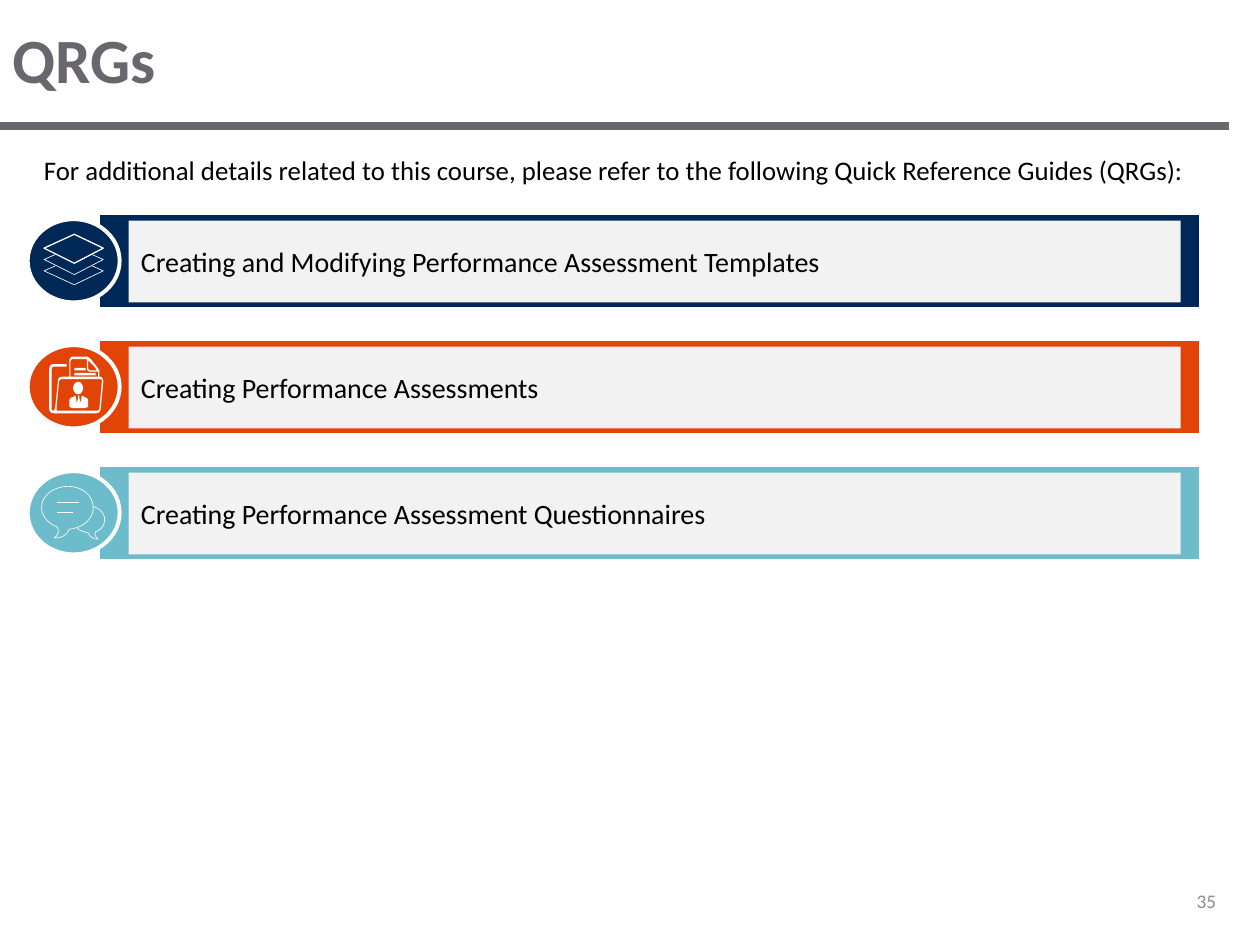
from pptx import Presentation
from pptx import util as u
from pptx.dml.color import RGBColor
from pptx.enum import shapes, text
from pptx.oxml import parse_xml
from pptx.oxml.ns import nsdecls

COLORS = {"grey": "69676D", "black": "000000", "white": "FFFFFF", "panel": "F2F2F2",
          "number": "8C8C8C", "navy": "002857", "orange": "E24307", "teal": "6CBCCB"}
FONT = "Calibri"
WIDTH, HEIGHT = 10, 7.5
UNIT = 0.01          # icon grid step, inches
THIN = 0.37          # fine icon stroke, points


def rgb(name):
    return RGBColor.from_string(COLORS[name])


def style(shape, fill=None, line=None, weight=1):
    shape.shadow.inherit = False
    if fill:
        shape.fill.solid()
        shape.fill.fore_color.rgb = rgb(fill)
    else:
        shape.fill.background()
    if line:
        shape.line.color.rgb = rgb(line)
        shape.line.width = u.Pt(weight)
    else:
        shape.line.fill.background()


def add_box(slide, kind, box, fill, line=None, weight=1):
    shape = slide.shapes.add_shape(kind, *map(u.Inches, box))
    style(shape, fill, line, weight)
    return shape


def add_line(slide, start, end, color, weight):
    line = slide.shapes.add_connector(shapes.MSO_CONNECTOR.STRAIGHT,
                                      *map(u.Inches, (*start, *end)))
    line.line.color.rgb = rgb(color)
    line.line.width = u.Pt(weight)
    line._element.spPr.append(parse_xml(f"<a:effectLst {nsdecls('a')}/>"))


def write(shape, words, size, color, bold=False, align=text.PP_ALIGN.LEFT,
          anchor=text.MSO_ANCHOR.MIDDLE, space=0):
    frame = shape.text_frame
    frame.word_wrap = True
    frame.vertical_anchor = anchor
    paragraph = frame.paragraphs[0]
    paragraph.alignment = align
    paragraph.space_before = paragraph.space_after = u.Pt(space)
    run = paragraph.add_run()
    run.text = words
    run.font.name, run.font.size, run.font.bold = FONT, u.Pt(size), bold
    run.font.color.rgb = rgb(color)


def flatten(steps, samples=10):
    """Turn points (x, y) and cubic curves (x1, y1, x2, y2, x, y) into points."""
    points = [steps[0]]
    for step in steps[1:]:
        if len(step) == 2:
            points.append(step)
            continue
        controls = [points[-1], step[:2], step[2:4], step[4:]]
        for i in range(1, samples + 1):
            t = i / samples
            weights = ((1 - t) ** 3, 3 * t * (1 - t) ** 2, 3 * t * t * (1 - t), t ** 3)
            points.append(tuple(sum(w * c[axis] for w, c in zip(weights, controls))
                                for axis in (0, 1)))
    return points


def add_outline(slide, origin, contours, closed=True, **look):
    left, top = origin
    builder = None
    for contour in contours:
        points = [(u.Inches(left + x * UNIT), u.Inches(top + y * UNIT))
                  for x, y in flatten(contour)]
        if builder is None:
            builder = slide.shapes.build_freeform(*points[0])
        else:
            builder.move_to(*points[0])
        builder.add_line_segments(points[1:], close=closed)
    style(builder.convert_to_shape(), **look)


# Icons, drawn on the unit grid from the badge's top left corner
def layers_icon(slide, left, top):
    sheets = [
        (0.75, True, [(37, 12), (13, 23), (37, 35), (60, 23)]),
        (THIN, False, [(51, 37), (60, 41), (37, 52), (13, 41), (22, 37)]),
        (THIN, False, [(51, 28), (60, 32), (37, 44), (13, 32), (22, 28)]),
    ]
    for weight, closed, sheet in sheets:
        add_outline(slide, (left, top), [sheet], closed, line="white", weight=weight)


def folder_icon(slide, left, top):
    folder = [(57, 25), (57, 21), (57, 19, 53, 15, 51, 12), (50, 11, 48, 9, 47, 9),
              (36, 9), (34, 9, 33, 11, 33, 13), (33, 25), (28, 25),
              (25, 25, 24, 26, 24, 29), (22, 48), (22, 50, 21, 52, 20, 52),
              (19, 52, 19, 50, 19, 49), (19, 20), (19, 19, 19, 17, 21, 17),
              (31, 17), (31, 15), (21, 15), (18, 15, 17, 17, 17, 20), (17, 50),
              (17, 53, 19, 54, 21, 54), (54, 54), (57, 54, 58, 52, 58, 50),
              (60, 29), (60, 27, 59, 25, 57, 25)]
    corner = [(48, 12), (53, 17), (55, 20), (50, 20), (49, 20, 48, 19, 48, 18)]
    page = [(34, 13), (34, 12, 35, 11, 36, 11), (47, 11), (47, 18),
            (47, 20, 48, 21, 50, 21), (56, 21), (56, 25), (34, 25)]
    front = [(57, 50), (57, 51, 56, 52, 55, 52), (23, 52), (23, 48), (25, 28),
             (25, 28, 26, 27, 27, 27), (57, 27), (58, 27, 59, 27, 59, 28)]
    suit = [(47, 42), (43, 40), (42, 46), (41, 42), (41, 40), (40, 40), (40, 42),
            (39, 46), (38, 40), (34, 42), (33, 43, 33, 44, 33, 45), (33, 49),
            (36, 50), (45, 50), (48, 49), (48, 45), (48, 44, 48, 43, 47, 42)]
    for contours in ([suit], [folder, corner, page, front]):
        add_outline(slide, (left, top), contours, fill="white")
    # Head and the two lines of writing on the page
    kinds = shapes.MSO_SHAPE
    for kind, x, y, width, height in ((kinds.OVAL, 36, 29, 8, 10),
                                      (kinds.ROUNDED_RECTANGLE, 37, 18, 9, 2),
                                      (kinds.ROUNDED_RECTANGLE, 37, 22, 17, 2)):
        add_box(slide, kind, (left + x * UNIT, top + y * UNIT,
                              width * UNIT, height * UNIT), "white")


def bubbles_icon(slide, left, top):
    large = [(33, 46), (44, 45, 52, 38, 52, 29), (52, 19, 43, 12, 32, 12),
             (21, 12, 11, 19, 11, 29), (11, 36, 17, 42, 23, 44),
             (27, 49, 21, 53, 21, 53), (29, 53, 32, 49, 33, 46)]
    small = [(39, 45), (41, 47, 44, 48, 48, 49), (49, 51, 51, 54, 56, 54),
             (56, 54, 52, 51, 54, 48), (59, 46, 61, 43, 61, 38),
             (61, 34, 58, 30, 52, 28)]
    for bubble in (large, small):
        add_outline(slide, (left, top), [bubble], False, line="white", weight=THIN)
    for end, y in ((41, 25), (36, 33)):
        add_line(slide, (left + 23 * UNIT, top + y * UNIT),
                 (left + end * UNIT, top + y * UNIT), "white", THIN)


def add_header(slide, box):
    left, top, width, height = box
    add_line(slide, (left, top + height), (left + 0.975 * width, top + height), "grey", 5)
    title = slide.shapes.title
    title.left, title.top, title.width, title.height = map(
        u.Inches, (left, top, width, 0.92 * height))
    write(title, "QRGs", 36, "grey", bold=True)


def add_text(slide, box, *args, **kwargs):
    write(slide.shapes.add_textbox(*map(u.Inches, box)), *args, **kwargs)


def add_guide(slide, box, words, color, icon):
    left, top, width, height = box
    kinds = shapes.MSO_SHAPE
    add_box(slide, kinds.RECTANGLE, (left + 0.56, top, width - 0.56, height),
            color, "white", 2)
    panel = add_box(slide, kinds.RECTANGLE,
                    (left + 0.8, top + 0.06, width - 0.96, height - 0.11), "panel")
    write(panel, words, 16, "black")
    badge = left, top + 0.05
    add_box(slide, kinds.OVAL, (*badge, 0.73, height - 0.1), color, "white", 2.25)
    icon(slide, *badge)


def main():
    presentation = Presentation()
    presentation.slide_width, presentation.slide_height = u.Inches(WIDTH), u.Inches(HEIGHT)
    slide = presentation.slides.add_slide(presentation.slide_layouts[5])
    add_header(slide, (0, 0, WIDTH, 1))
    add_text(slide, (0.25, 1.17, 0.95 * WIDTH, 0.42),
             "For additional details related to this course, please refer to the "
             "following Quick Reference Guides (QRGs):",
             15.3, "black", anchor=text.MSO_ANCHOR.TOP, space=6)
    guides = [
        ("Creating and Modifying Performance Assessment Templates", "navy", layers_icon),
        ("Creating Performance Assessments", "orange", folder_icon),
        ("Creating Performance Assessment Questionnaires", "teal", bubbles_icon),
    ]
    for row, guide in enumerate(guides):
        add_guide(slide, (0.22, 1.69 + row, 9.31, 0.76), *guide)
    # Slide number
    add_text(slide, (8.08, 6.95, 1.67, 0.4), "35", 11, "number",
             align=text.PP_ALIGN.RIGHT)
    presentation.save("out.pptx")


if __name__ == "__main__":
    main()
